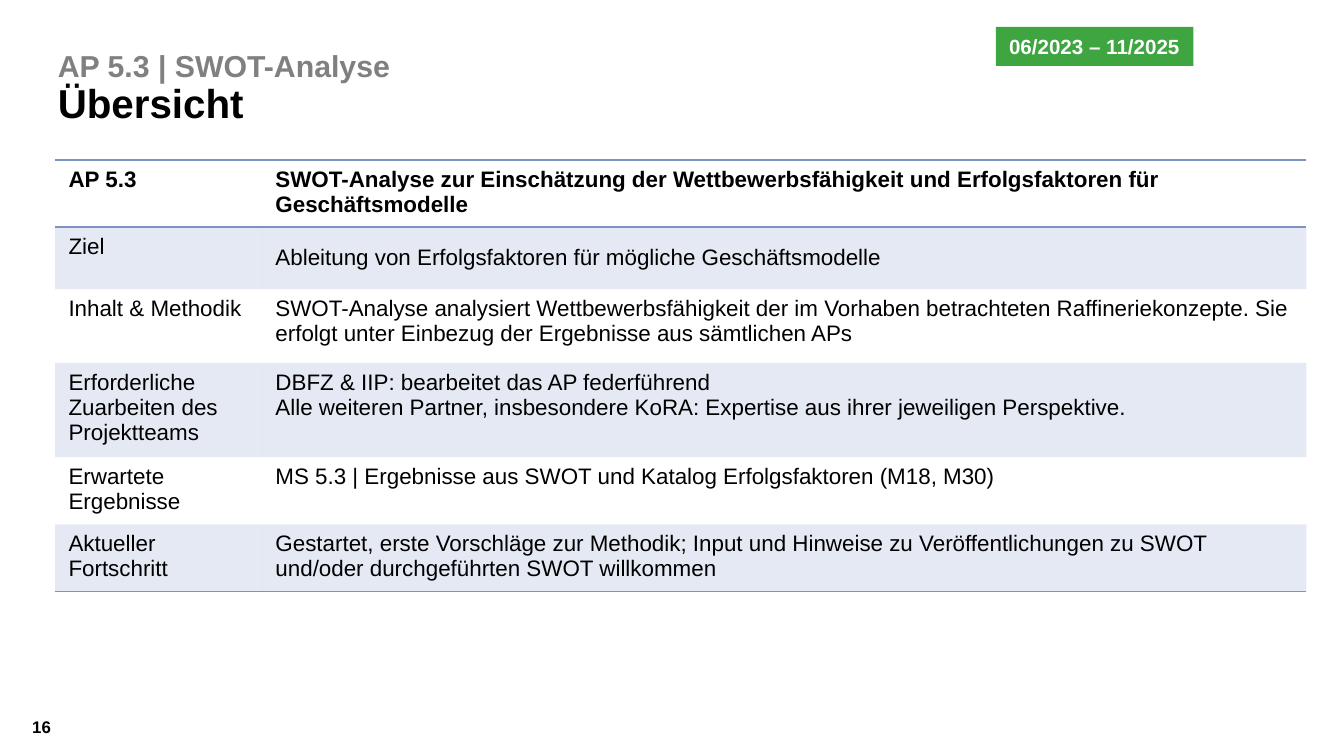
"""Builds the overview slide of work package 5.3, the SWOT analysis."""
from lxml import etree
from pptx import Presentation
from pptx.dml.color import RGBColor
from pptx.enum.shapes import MSO_SHAPE
from pptx.enum.text import MSO_ANCHOR, MSO_AUTO_SIZE, PP_ALIGN
from pptx.oxml import parse_xml
from pptx.oxml.ns import nsdecls, qn
from pptx.util import Inches, Pt

RECTANGLE = MSO_SHAPE.RECTANGLE
TOP, MIDDLE, BOTTOM = MSO_ANCHOR.TOP, MSO_ANCHOR.MIDDLE, MSO_ANCHOR.BOTTOM
GROW = MSO_AUTO_SIZE.SHAPE_TO_FIT_TEXT
LEFT = PP_ALIGN.LEFT
BLUE = "7D92C3"
NO_GRID_STYLE = "{2D5ABB26-0587-4C30-8999-92F81FD0307C}"


def color(value):
    return RGBColor.from_string(value)


def add_text(paragraph, text, size=12, fill="000000", bold=False):
    run = paragraph.add_run()
    run.text = text
    run.font.name = "Arial"
    run.font.size = Pt(size)
    run.font.bold = bold
    run.font.color.rgb = color(fill)


presentation = Presentation()
presentation.slide_width = Inches(10)
presentation.slide_height = Inches(10) * 9 // 16
slide = presentation.slides.add_slide(presentation.slide_layouts[6])

frames = []
for box, anchor in [((0.24, 5.19, 0.36, 0.43), MIDDLE), ((0.43, 0.32, 7.51, 0.63), BOTTOM)]:
    frame = slide.shapes.add_textbox(*map(Inches, box)).text_frame
    frame.word_wrap = True
    frame.vertical_anchor = anchor
    frame.margin_left = frame.margin_right = frame.margin_top = frame.margin_bottom = 0
    frames.append(frame)
number_frame, title_frame = frames

add_text(number_frame.paragraphs[0], "16", size=9, bold=True)
title = title_frame.paragraphs[0]
title.line_spacing = 0.9
add_text(title, "AP 5.3 | SWOT-Analyse", size=16.2, fill="808080", bold=True)
title.add_line_break()
add_text(title, "Übersicht", size=21.6, bold=True)

rows = [
    (0.31, "AP 5.3", "SWOT-Analyse zur Einschätzung der Wettbewerbsfähigkeit und "
     "Erfolgsfaktoren für Geschäftsmodelle"),
    (0.46, "Ziel", "Ableitung von Erfolgsfaktoren für mögliche Geschäftsmodelle"),
    (0.55, "Inhalt & Methodik", "SWOT-Analyse analysiert Wettbewerbsfähigkeit der im Vorhaben "
     "betrachteten Raffineriekonzepte. Sie erfolgt unter Einbezug der Ergebnisse aus "
     "sämtlichen APs"),
    (0.57, "Erforderliche Zuarbeiten des Projektteams",
     "DBFZ & IIP: bearbeitet das AP federführend\n"
     "Alle weiteren Partner, insbesondere KoRA: Expertise aus ihrer jeweiligen Perspektive."),
    (0.46, "Erwartete Ergebnisse",
     "MS 5.3 | Ergebnisse aus SWOT und Katalog Erfolgsfaktoren (M18, M30)"),
    (0.5, "Aktueller Fortschritt", "Gestartet, erste Vorschläge zur Methodik; Input und Hinweise "
     "zu Veröffentlichungen zu SWOT und/oder durchgeführten SWOT willkommen"),
]
borders = {0: ["lnT", "lnB"], len(rows) - 1: ["lnB"]}
table_box = map(Inches, (0.41, 1.19, 9.31, 3.21))
table_shape = slide.shapes.add_table(len(rows), 2, *table_box)
table = table_shape.table
table.first_row = table.horz_banding = False
table._tbl.tblPr.find(qn("a:tableStyleId")).text = NO_GRID_STYLE
table.columns[0].width = Inches(1.54)
table.columns[1].width = Inches(7.77)

for row_index, (height, *texts) in enumerate(rows):
    table.rows[row_index].height = Inches(height)
    for column_index, text in enumerate(texts):
        cell = table.cell(row_index, column_index)
        cell.vertical_anchor = MIDDLE if (row_index, column_index) == (1, 1) else TOP
        for line_index, line in enumerate(text.split("\n")):
            frame = cell.text_frame
            paragraph = frame.add_paragraph() if line_index else frame.paragraphs[0]
            add_text(paragraph, line, bold=row_index == 0)
        properties = cell._tc.get_or_add_tcPr()
        for side in borders.get(row_index, []):
            properties.append(parse_xml(
                f'<a:{side} {nsdecls("a")} w="12700"><a:solidFill>'
                f'<a:srgbClr val="{BLUE}"/></a:solidFill></a:{side}>'))
        if row_index % 2:
            cell.fill.solid()
            cell.fill.fore_color.rgb = color(BLUE)
            tint = properties.find(qn("a:solidFill")).find(qn("a:srgbClr"))
            etree.SubElement(tint, qn("a:alpha"), val="20000")
        else:
            cell.fill.background()
table_shape.height = Inches(3.21)

badge = slide.shapes.add_shape(RECTANGLE, *map(Inches, (7.41, 0.2, 1.47, 0.29)))
badge.shadow.inherit = False
badge.fill.solid()
badge.fill.fore_color.rgb = color("3EA540")
badge.line.fill.background()
badge.text_frame.word_wrap = False
badge.text_frame.auto_size = GROW
badge.text_frame.vertical_anchor = TOP
period = badge.text_frame.paragraphs[0]
period.alignment = LEFT
add_text(period, "06/2023 – 11/2025", size=11, fill="FFFFFF", bold=True)

presentation.save("out.pptx")
